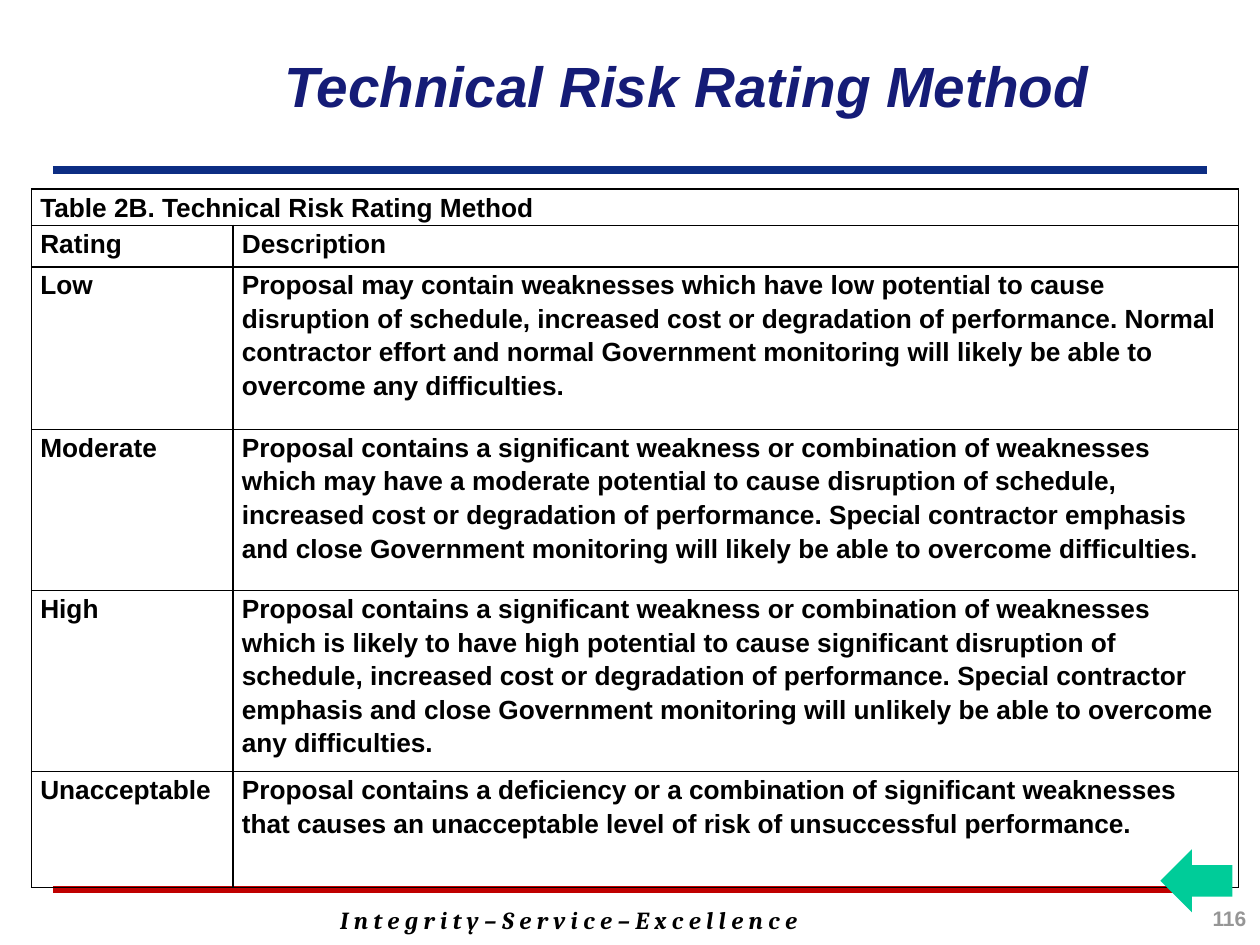
from lxml import etree
from pptx import Presentation
from pptx.dml.color import RGBColor
from pptx.enum.shapes import MSO_CONNECTOR, MSO_SHAPE
from pptx.enum.text import MSO_ANCHOR, PP_ALIGN
from pptx.oxml.ns import qn
from pptx.util import Inches, Pt

COLUMNS, ROWS = 100, 75
RATINGS = [
    ("Rating", "Description"),
    ("Low", "Proposal may contain weaknesses which have low potential to cause "
     "disruption of schedule, increased cost or degradation of performance. "
     "Normal contractor effort and normal Government monitoring will likely "
     "be able to overcome any difficulties."),
    ("Moderate", "Proposal contains a significant weakness or combination of "
     "weaknesses which may have a moderate potential to cause disruption of "
     "schedule, increased cost or degradation of performance. Special "
     "contractor emphasis and close Government monitoring will likely be able "
     "to overcome difficulties."),
    ("High", "Proposal contains a significant weakness or combination of "
     "weaknesses which is likely to have high potential to cause significant "
     "disruption of schedule, increased cost or degradation of performance. "
     "Special contractor emphasis and close Government monitoring will "
     "unlikely be able to overcome any difficulties."),
    ("Unacceptable", "Proposal contains a deficiency or a combination of "
     "significant weaknesses that causes an unacceptable level of risk of "
     "unsuccessful performance."),
]


def color(value):
    return RGBColor.from_string(value)


class SlideBuilder:
    ink = "000000"
    font = "Arial"

    def __init__(self, deck):
        self.column = deck.slide_width / COLUMNS
        self.row = deck.slide_height / ROWS
        self.slide = deck.slides.add_slide(deck.slide_layouts[5])

    def across(self, columns):
        return round(columns * self.column)

    def down(self, rows):
        return round(rows * self.row)

    def box(self, left, top, width, height):
        return (self.across(left), self.down(top),
                self.across(width), self.down(height))

    def set_words(self, frame, words, size, ink=None, font=None, italic=False,
                  align=PP_ALIGN.LEFT, spacing=None):
        frame.text = words
        paragraph = frame.paragraphs[0]
        paragraph.alignment = align
        paragraph.line_spacing = spacing
        for run in paragraph.runs:
            run.font.name = font or self.font
            run.font.size = Pt(size)
            run.font.bold = True
            run.font.italic = italic
            run.font.color.rgb = color(ink or self.ink)

    def title(self, words, area, **style):
        heading = self.slide.shapes.title
        heading.left, heading.top, heading.width, heading.height = self.box(*area)
        heading.text_frame.vertical_anchor = MSO_ANCHOR.MIDDLE
        self.set_words(heading.text_frame, words, **style)

    def text(self, words, area, **style):
        frame = self.slide.shapes.add_textbox(*self.box(*area)).text_frame
        frame.word_wrap = True
        self.set_words(frame, words, **style)

    def rule(self, left, right, level, ink):
        line = self.slide.shapes.add_connector(
            MSO_CONNECTOR.STRAIGHT, self.across(left), self.down(level),
            self.across(right), self.down(level))
        line.line.color.rgb = color(ink)
        line.line.width = Pt(4.5)
        etree.SubElement(line._element.spPr, qn("a:effectLst"))

    def arrow(self, area, ink):
        back = self.slide.shapes.add_shape(MSO_SHAPE.RIGHT_ARROW, *self.box(*area))
        back.rotation = 180
        back.shadow.inherit = False
        back.fill.solid()
        back.fill.fore_color.rgb = color(ink)
        back.line.fill.background()

    def border(self, cell):
        properties = cell._tc.get_or_add_tcPr()
        for position, side in enumerate(("lnL", "lnR", "lnT", "lnB")):
            edge = etree.Element(qn(f"a:{side}"), w=str(Pt(1)))
            fill = etree.SubElement(edge, qn("a:solidFill"))
            etree.SubElement(fill, qn("a:srgbClr"), val=self.ink)
            properties.insert(position, edge)

    def table(self, caption, records, left, top, widths, heights):
        area = self.box(left, top, sum(widths), sum(heights))
        grid = self.slide.shapes.add_table(len(heights), len(widths), *area).table
        for column, width in zip(grid.columns, widths):
            column.width = self.across(width)
        for row, height in zip(grid.rows, heights):
            row.height = self.down(height)
        grid.cell(0, 0).merge(grid.cell(0, len(widths) - 1))
        for row, record in zip(grid.rows, [(caption, ""), *records]):
            for cell, words in zip(row.cells, record):
                cell.margin_left = cell.margin_right = Inches(0.07)
                cell.margin_top = cell.margin_bottom = 0
                cell.fill.background()
                self.border(cell)
                if not cell.is_spanned:
                    self.set_words(cell.text_frame, words, size=15, spacing=1.15)


def main():
    deck = Presentation()
    deck.slide_width, deck.slide_height = Inches(10), Inches(7.5)
    page = SlideBuilder(deck)
    page.rule(4.2, 95.8, 70.6, "C00000")
    page.rule(4.2, 95.8, 13.5, "0C2D83")
    page.title("Technical Risk Rating Method", (18.2, 0.8, 69.2, 11.8),
               size=32.4, ink="151C77", italic=True, align=PP_ALIGN.RIGHT)
    page.text("116", (87.4, 71.4, 12.5, 3.3), size=12, ink="969696",
              align=PP_ALIGN.RIGHT)
    page.table("Table 2B. Technical Risk Rating Method", RATINGS, 2.5, 15,
               widths=(16, 79.8), heights=(2.6, 3.3, 12.9, 12.8, 14.3, 9.2))
    page.arrow((92.1, 67.4, 5.7, 5), "00CC99")
    page.text("I n t e g r i t y – S e r v i c e – E x c e l l e n c e",
              (26, 71.3, 62.5, 3.4), size=14, font="Cambria", italic=True)
    deck.save("out.pptx")


if __name__ == "__main__":
    main()
